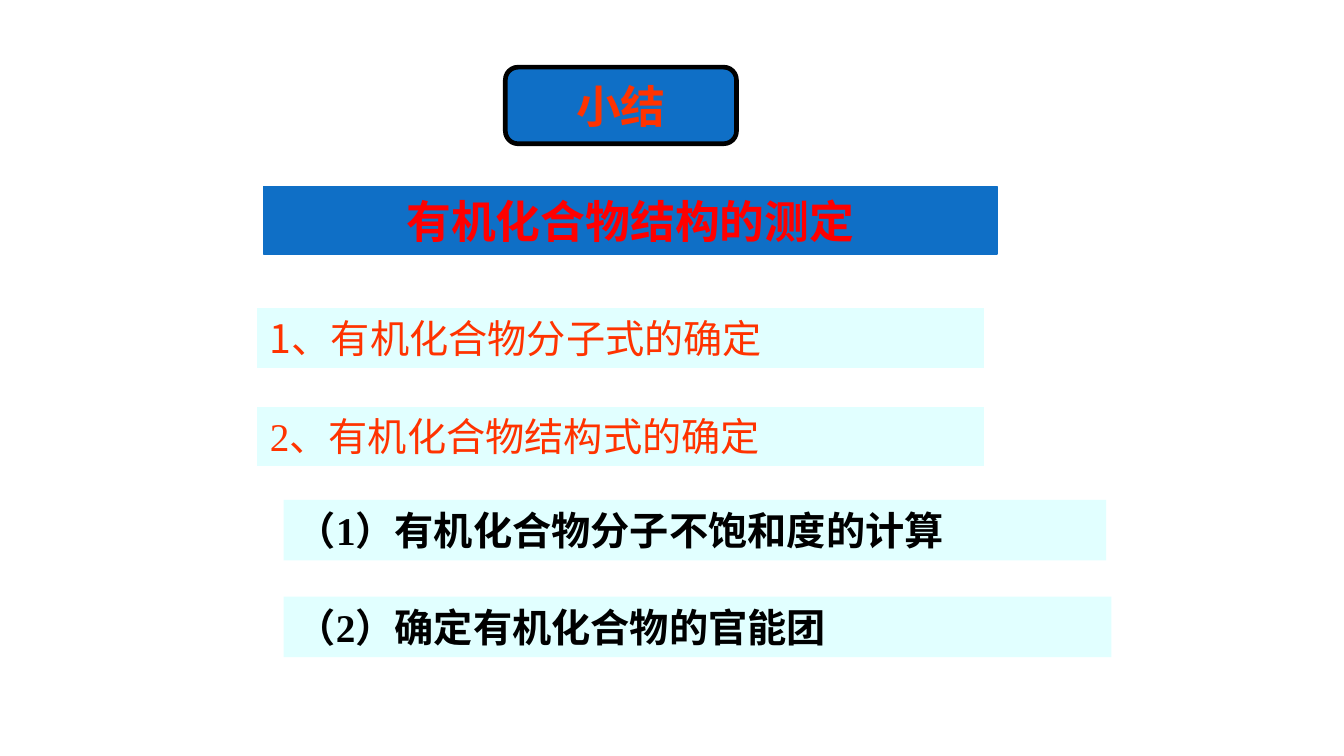
from lxml import etree
from pptx import Presentation
from pptx.dml.color import RGBColor
from pptx.enum.shapes import MSO_SHAPE
from pptx.enum.text import MSO_ANCHOR, PP_ALIGN
from pptx.oxml.ns import qn
from pptx.util import Inches, Pt

RECT, ROUNDED = MSO_SHAPE.RECTANGLE, MSO_SHAPE.ROUNDED_RECTANGLE
LEFT, CENTER = PP_ALIGN.LEFT, PP_ALIGN.CENTER
TOP, MIDDLE = MSO_ANCHOR.TOP, MSO_ANCHOR.MIDDLE

BLUE = RGBColor(0x0F, 0x6F, 0xC6)
PALE_CYAN = RGBColor(0xCC, 0xFF, 0xFF)
RED = RGBColor(0xFF, 0x00, 0x00)
ORANGE = RGBColor(0xFF, 0x33, 0x00)
BLACK = RGBColor(0x00, 0x00, 0x00)
WHITE = RGBColor(0xFF, 0xFF, 0xFF)

SANS, SERIF = "Noto Sans CJK SC", "Times New Roman"

ROW_HEIGHT = 0.45
TOPICS_LEFT, TOPICS_TOP, TOPICS_PITCH = 1.91, 2.29, 0.73
STEPS_LEFT, STEPS_TOP, STEPS_PITCH = 2.11, 3.72, 0.72

prs = Presentation()
prs.slide_width = Inches(10)
prs.slide_height = prs.slide_width * 9 // 16
slide = prs.slides.add_slide(prs.slide_layouts[6])


def add_bar(text, left, top, width, height=ROW_HEIGHT, *, preset=RECT,
            fill=PALE_CYAN, opacity=58, line=None, line_width=0.75,
            font=SERIF, size=21, color=ORANGE, bold=False,
            align=LEFT, anchor=TOP, wrap=True):
    """Add a filled shape with one line of text; opacity is in percent."""
    bar = slide.shapes.add_shape(
        preset, Inches(left), Inches(top), Inches(width), Inches(height))
    bar.shadow.inherit = False
    bar.fill.solid()
    bar.fill.fore_color.rgb = fill
    if opacity < 100:
        fill_color = bar.element.spPr.find(qn("a:solidFill"))[0]
        etree.SubElement(fill_color, qn("a:alpha"), val=str(opacity * 1000))
    if line is None:
        bar.line.fill.background()
    else:
        bar.line.color.rgb = line
        bar.line.width = Pt(line_width)

    frame = bar.text_frame
    frame.word_wrap = wrap
    frame.vertical_anchor = anchor
    paragraph = frame.paragraphs[0]
    paragraph.alignment = align
    run = paragraph.add_run()
    run.text = text
    run.font.size = Pt(size)
    run.font.bold = bold
    run.font.color.rgb = color
    run.font.name = font
    etree.SubElement(run.font._element, qn("a:ea"), typeface=SANS)


add_bar("有机化合物结构的测定", 1.96, 1.39, 5.46, 0.5, fill=BLUE, opacity=100,
        line=BLUE, font=SANS, size=24, color=RED, bold=True, align=CENTER)

topics = [("1、有机化合物分子式的确定", SANS), ("2、有机化合物结构式的确定", SERIF)]
for row, (topic, font) in enumerate(topics):
    add_bar(topic, TOPICS_LEFT, TOPICS_TOP + row * TOPICS_PITCH, 5.42,
            line=WHITE, font=font)

steps = [("（1）有机化合物分子不饱和度的计算", 6.12), ("（2）确定有机化合物的官能团", 6.16)]
for row, (step, width) in enumerate(steps):
    add_bar(step, STEPS_LEFT, STEPS_TOP + row * STEPS_PITCH, width,
            color=BLACK, bold=True)

add_bar("小结", 3.76, 0.5, 1.72, 0.57, preset=ROUNDED, fill=BLUE, opacity=100,
        line=BLACK, line_width=2.5, size=24, bold=True, align=CENTER,
        anchor=MIDDLE, wrap=False)

prs.save("out.pptx")
